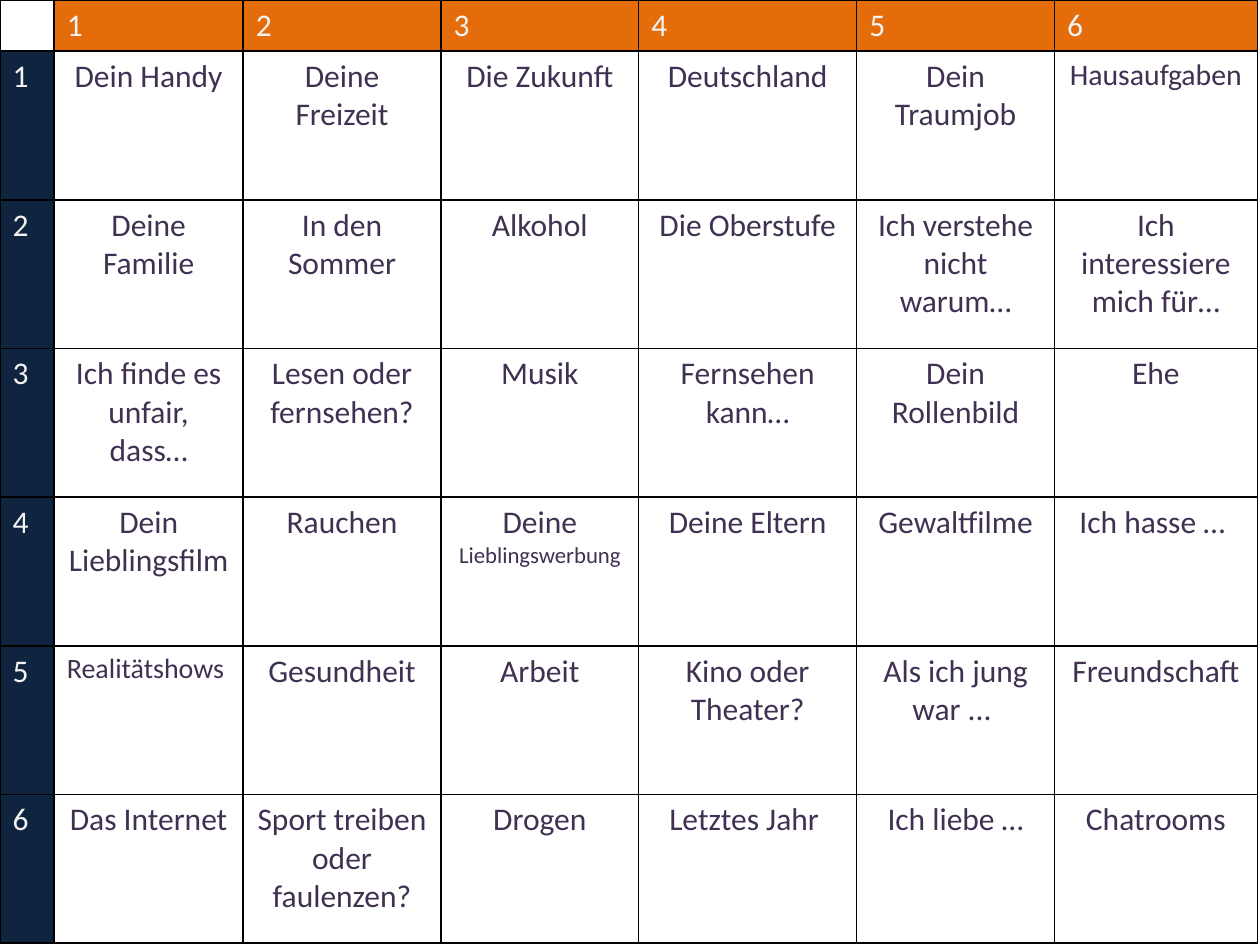
from dataclasses import dataclass
from typing import Optional

from lxml import etree
from pptx import Presentation
from pptx.dml.color import RGBColor
from pptx.enum.text import PP_ALIGN
from pptx.oxml.ns import qn
from pptx.table import _Cell
from pptx.util import Inches, Pt

LEFT, CENTER = PP_ALIGN.LEFT, PP_ALIGN.CENTER


@dataclass(frozen=True)
class Theme:
    font: str = "Calibri"
    label: str = "F2F2F2"
    topic: str = "403152"
    column_header: str = "E46C0A"
    row_header: str = "0F243E"
    border: str = "000000"
    border_width: float = 1
    body_size: int = 18
    long_word_size: int = 17
    longer_word_size: int = 16
    longest_word_size: int = 13


THEME = Theme()


@dataclass(frozen=True)
class Entry:
    text: str
    size: int = THEME.body_size
    color: str = THEME.topic
    align: PP_ALIGN = CENTER
    fill: Optional[str] = None
    small_ending: str = ""


COLUMN_WIDTHS = [0.43, 1.5, 1.57, 1.57, 1.73, 1.57, 1.61]
HEADER_HEIGHT = 0.38
TOPIC_HEIGHT = 1.18

TOPICS = [
    ["Dein Handy", "Deine Freizeit", "Die Zukunft", "Deutschland", "Dein Traumjob",
     Entry("Hausaufgaben", THEME.long_word_size)],
    ["Deine Familie", "In den Sommer", "Alkohol", "Die Oberstufe",
     "Ich verstehe nicht warum…", "Ich interessiere mich für…"],
    ["Ich finde es unfair, dass…", "Lesen oder fernsehen?", "Musik",
     "Fernsehen kann…", "Dein Rollenbild", "Ehe"],
    ["Dein Lieblingsfilm", "Rauchen", Entry("Deine ", small_ending="Lieblingswerbung"),
     "Deine Eltern", "Gewaltfilme", "Ich hasse … "],
    [Entry("Realitätshows ", THEME.longer_word_size), "Gesundheit", "Arbeit",
     "Kino oder Theater?", "Als ich jung war ... ", "Freundschaft"],
    ["Das Internet", "Sport treiben oder faulenzen?", "Drogen", "Letztes Jahr ",
     "Ich liebe …", "Chatrooms"],
]


def header(number: int, fill: str) -> Entry:
    return Entry(str(number), color=THEME.label, align=LEFT, fill=fill)


def draw_borders(cell: _Cell) -> None:
    properties = cell._tc.get_or_add_tcPr()
    for side in ("a:lnL", "a:lnR", "a:lnT", "a:lnB"):
        line = etree.SubElement(properties, qn(side), w=str(Pt(THEME.border_width)))
        solid = etree.SubElement(line, qn("a:solidFill"))
        etree.SubElement(solid, qn("a:srgbClr"), val=THEME.border)


def draw_cell(cell: _Cell, entry: Entry) -> None:
    draw_borders(cell)
    if entry.fill:
        cell.fill.solid()
        cell.fill.fore_color.rgb = RGBColor.from_string(entry.fill)
    else:
        cell.fill.background()
    if not entry.text:
        return
    para = cell.text_frame.paragraphs[0]
    para.alignment = entry.align
    para.font.name = THEME.font
    para.font.size = Pt(entry.size)
    para.font.color.rgb = RGBColor.from_string(entry.color)
    para.add_run().text = entry.text
    if entry.small_ending:
        span = para.add_run()
        span.text = entry.small_ending
        span.font.size = Pt(THEME.longest_word_size)


def build_grid() -> list[list[Entry]]:
    numbers = [header(n, THEME.column_header) for n in range(1, len(COLUMN_WIDTHS))]
    grid = [[Entry(""), *numbers]]
    for number, topics in enumerate(TOPICS, start=1):
        entries = [t if isinstance(t, Entry) else Entry(t) for t in topics]
        grid.append([header(number, THEME.row_header), *entries])
    return grid


def main() -> None:
    deck = Presentation()
    deck.slide_width, deck.slide_height = Inches(10), Inches(7.5)
    page = deck.slides.add_slide(deck.slide_layouts[6])

    grid = build_grid()
    height = HEADER_HEIGHT + TOPIC_HEIGHT * len(TOPICS)
    table = page.shapes.add_table(
        len(grid), len(COLUMN_WIDTHS), 0, 0, Inches(10), Inches(height)
    ).table
    table.first_row = False
    table.horz_banding = False
    for column, width in zip(table.columns, COLUMN_WIDTHS):
        column.width = Inches(width)
    for index, (row, entries) in enumerate(zip(table.rows, grid)):
        row.height = Inches(TOPIC_HEIGHT if index else HEADER_HEIGHT)
        for cell, entry in zip(row.cells, entries):
            draw_cell(cell, entry)

    deck.save("out.pptx")


if __name__ == "__main__":
    main()
